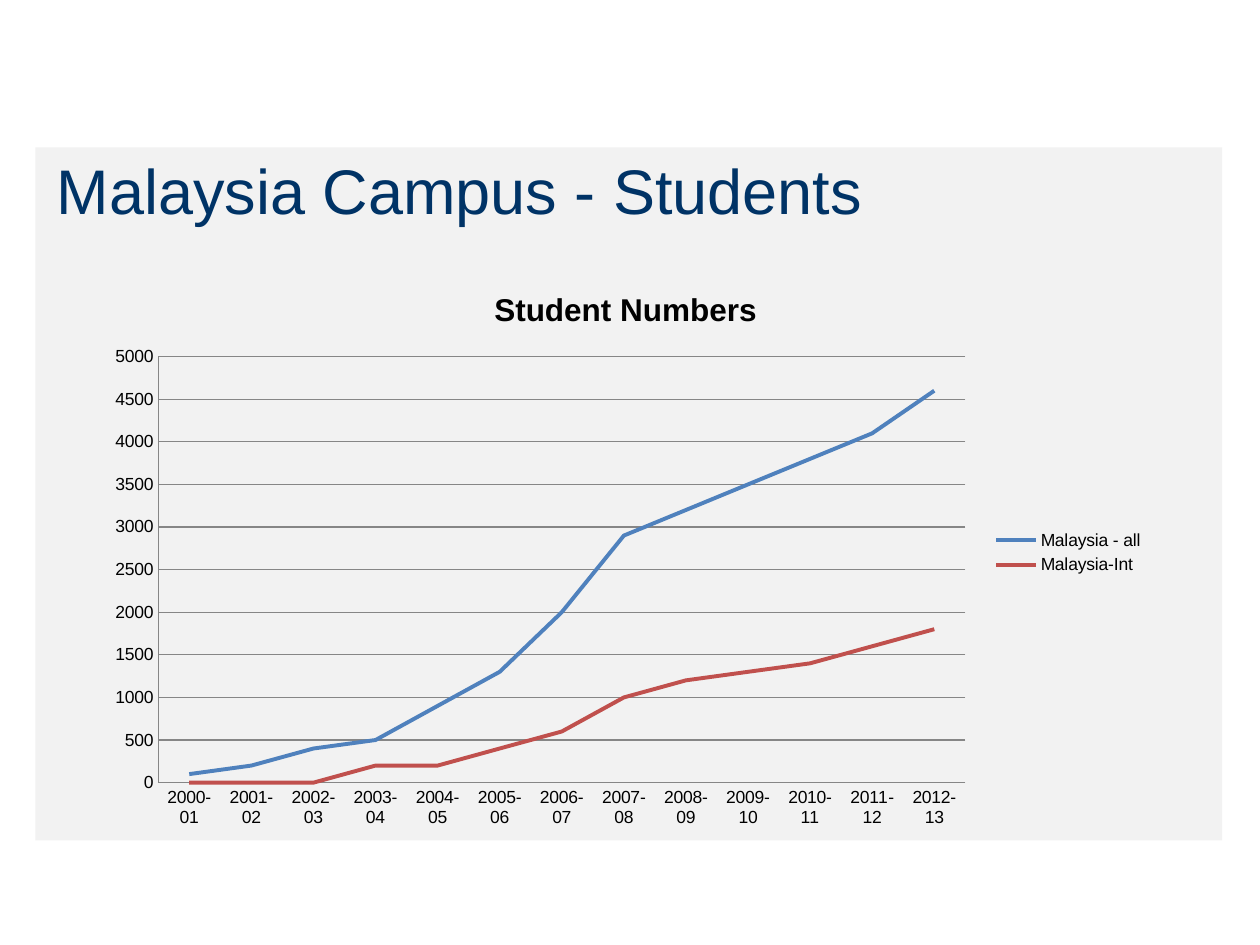
from lxml import etree
from pptx import Presentation
from pptx.chart.data import CategoryChartData
from pptx.dml.color import RGBColor
from pptx.enum.chart import XL_CHART_TYPE, XL_LEGEND_POSITION, XL_MARKER_STYLE, XL_TICK_MARK
from pptx.enum.shapes import MSO_SHAPE
from pptx.enum.text import MSO_ANCHOR, PP_ALIGN
from pptx.oxml.ns import qn
from pptx.util import Pt

LINE = XL_CHART_TYPE.LINE
RIGHT = XL_LEGEND_POSITION.RIGHT
NO_MARKER = XL_MARKER_STYLE.NONE
NO_TICK = XL_TICK_MARK.NONE
RECTANGLE = MSO_SHAPE.RECTANGLE
TOP = MSO_ANCHOR.TOP
LEFT = PP_ALIGN.LEFT


def rgb(value):
    return RGBColor.from_string(value)


def write(frame, text, size, color, bold=False, align=None):
    frame.text = text
    paragraph = frame.paragraphs[0]
    paragraph.alignment = align
    font = paragraph.runs[0].font
    font.name = "Arial"
    font.size = Pt(size)
    font.bold = bold
    font.color.rgb = rgb(color)


prs = Presentation()
prs.slide_width, prs.slide_height = Pt(720), Pt(540)
slide = prs.slides.add_slide(prs.slide_layouts[5])

panel = slide.shapes.add_shape(RECTANGLE, Pt(20.16), Pt(84.24), Pt(678.24), Pt(396))
panel.shadow.inherit = False
panel.fill.solid()
panel.fill.fore_color.rgb = rgb("F2F2F2")
panel.line.fill.background()
slide.shapes._spTree.insert(2, panel._element)

heading = slide.shapes.title
heading.left, heading.top, heading.width, heading.height = Pt(25.2), Pt(82.8), Pt(668.88), Pt(79.2)
heading.text_frame.vertical_anchor = TOP
write(heading.text_frame, "Malaysia Campus - Students", 36, "003366", align=LEFT)

enrolment = {
    "Malaysia - all": ("4F81BD", [100, 200, 400, 500, 900, 1300, 2000, 2900, 3200, 3500, 3800, 4100, 4600]),
    "Malaysia-Int": ("C0504D", [0, 0, 0, 200, 200, 400, 600, 1000, 1200, 1300, 1400, 1600, 1800]),
}
student_data = CategoryChartData()
student_data.categories = [f"{year}-{(year + 1) % 100:02d}" for year in range(2000, 2013)]
for name, (color, counts) in enrolment.items():
    student_data.add_series(name, counts)

students = slide.shapes.add_chart(LINE, Pt(54), Pt(151.2), Pt(606.96), Pt(329.04), student_data).chart
students.font.name = "Arial"
students.font.size = Pt(10)
students.font.color.rgb = rgb("000000")
students.has_title = True
write(students.chart_title.text_frame, "Student Numbers", 18, "000000", bold=True)
students.chart_title.include_in_layout = False
students.has_legend = True
students.legend.position = RIGHT
students.legend.include_in_layout = False
students.plots[0].vary_by_categories = False

for series, (color, counts) in zip(students.plots[0].series, enrolment.values()):
    series.smooth = False
    series.marker.style = NO_MARKER
    series.format.line.width = Pt(2.25)
    series.format.line.color.rgb = rgb(color)

years, numbers = students.category_axis, students.value_axis
numbers.minimum_scale, numbers.maximum_scale, numbers.major_unit = 0, 5000, 500
numbers.has_major_gridlines = True
for axis in (years, numbers):
    axis.major_tick_mark = axis.minor_tick_mark = NO_TICK
for rule in (years, numbers, numbers.major_gridlines):
    rule.format.line.width = Pt(0.75)
    rule.format.line.color.rgb = rgb("868686")

plot_area = students._chartSpace.chart.plotArea
for old_layout in plot_area.findall(qn("c:layout")):
    plot_area.remove(old_layout)
layout = etree.Element(qn("c:layout"))
plot_area.insert(0, layout)
manual = etree.SubElement(layout, qn("c:manualLayout"))
for tag, value in (("layoutTarget", "inner"), ("xMode", "edge"), ("yMode", "edge"),
                   ("x", "0.06"), ("y", "0.16"), ("w", "0.76"), ("h", "0.74")):
    etree.SubElement(manual, qn(f"c:{tag}")).set("val", value)

prs.save("out.pptx")
